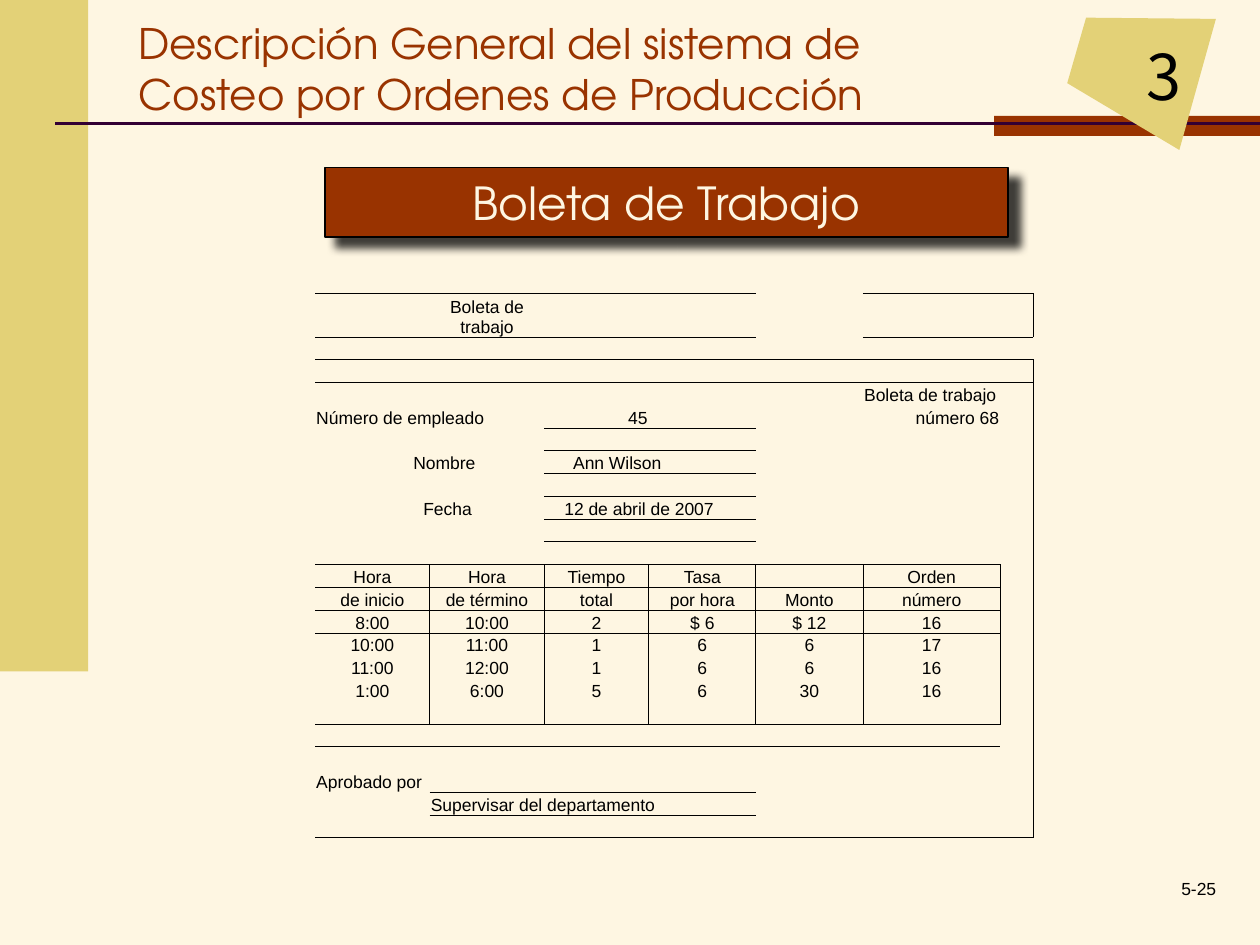
from lxml import etree
from pptx import Presentation
from pptx.dml.color import RGBColor
from pptx.enum.shapes import MSO_CONNECTOR, MSO_SHAPE
from pptx.enum.text import MSO_ANCHOR, PP_ALIGN
from pptx.oxml import parse_xml
from pptx.oxml.ns import nsdecls, qn
from pptx.util import Inches, Pt

RECTANGLE = MSO_SHAPE.RECTANGLE
STRAIGHT = MSO_CONNECTOR.STRAIGHT
TOP, MIDDLE, BOTTOM = MSO_ANCHOR.TOP, MSO_ANCHOR.MIDDLE, MSO_ANCHOR.BOTTOM
LEFT, CENTER, RIGHT = PP_ALIGN.LEFT, PP_ALIGN.CENTER, PP_ALIGN.RIGHT

CREAM = RGBColor(0xFE, 0xF6, 0xE2)
SAND = RGBColor(0xE3, 0xD1, 0x77)
RUST = RGBColor(0x99, 0x33, 0x00)
PLUM = RGBColor(0x33, 0x00, 0x33)
BLACK = RGBColor(0, 0, 0)

HEADING_FONT = "TeX Gyre Adventor"
CHAPTER_FONT = "Noto Sans CJK KR"
BODY_FONT = "Arial"
BODY_SIZE = 10

NO_GRID_STYLE = "{2D5ABB26-0587-4C30-8999-92F81FD0307C}"
COLUMN_WIDTHS = [0.91, 0.83, 0.83, 0.85, 0.85, 1.09, 0.26]
ROW_COUNT = 23
FIRST_ROW_HEIGHT = 0.34
TABLE_HEIGHT = 4.32

# row, column, text, alignment, left margin, columns spanned
LABELS = [
    (0, 1, "Boleta de trabajo", CENTER, 0.01, 1),
    (3, 5, "Boleta de trabajo", LEFT, 0.01, 2),
    (4, 0, "Número de empleado", LEFT, 0.01, 2),
    (4, 2, "45", RIGHT, 0.01, 1),
    (4, 5, "número 68", RIGHT, 0.01, 1),
    (6, 0, "Nombre", LEFT, 0.78, 2),
    (6, 2, "Ann Wilson", LEFT, 0.23, 2),
    (8, 0, "Fecha", LEFT, 0.86, 2),
    (8, 2, "12 de abril de 2007", LEFT, 0.16, 2),
    (20, 0, "Aprobado por", LEFT, 0.01, 1),
    (21, 1, "Supervisar del departamento", LEFT, 0.01, 3),
]
HOURS_TOP = 11
HOURS = [
    ["Hora", "Hora", "Tiempo", "Tasa", "", "Orden"],
    ["de inicio", "de término", "total", "por hora", "Monto", "número"],
    ["8:00", "10:00", "2", "$ 6", "$ 12", "16"],
    ["10:00", "11:00", "1", "6", "6", "17"],
    ["11:00", "12:00", "1", "6", "6", "16"],
    ["1:00", "6:00", "5", "6", "30", "16"],
]

# side, rows, columns
RULES = [
    ("T", [0], [0, 1, 2, 3, 5, 6]),
    ("B", [0], [0, 1, 2, 3, 5, 6]),
    ("B", [1, 22], range(7)),
    ("B", [4, 6, 8], [2, 3]),
    ("B", [10, 12, 17], range(6)),
    ("B", [20], [1, 2, 3]),
    ("R", [0, *range(2, ROW_COUNT)], [6]),
    ("R", range(HOURS_TOP, 18), range(5)),
    ("R", [3, 14], [5]),
]


def write(frame, text, font, size, color, align=LEFT, anchor=TOP):
    frame.word_wrap = True
    frame.vertical_anchor = anchor
    frame.text = text
    para = frame.paragraphs[0]
    para.alignment = align
    for span in para.runs:
        span.font.name = font
        span.font.size = Pt(size)
        span.font.color.rgb = color


def add_text(page, place, *style):
    box = page.shapes.add_textbox(*map(Inches, place))
    write(box.text_frame, *style)


def paint(shape, color):
    shape.shadow.inherit = False
    shape.fill.solid()
    shape.fill.fore_color.rgb = color
    shape.line.fill.background()


def add_block(page, place, color):
    block = page.shapes.add_shape(RECTANGLE, *map(Inches, place))
    paint(block, color)
    return block


def add_title_rule(page):
    rule = page.shapes.add_connector(
        STRAIGHT, Inches(0.44), Inches(0.98), Inches(10), Inches(0.98))
    rule.line.color.rgb = PLUM
    rule.line.width = Pt(1.5)
    etree.SubElement(rule._element.spPr, qn("a:effectLst"))


def add_chapter_badge(page):
    corners = [(8.62, 0.14), (8.47, 0.66), (9.36, 1.19), (9.65, 0.15)]
    start, *rest = [(Inches(x), Inches(y)) for x, y in corners]
    builder = page.shapes.build_freeform(*start)
    builder.add_line_segments(rest, close=True)
    paint(builder.convert_to_shape(), SAND)
    add_text(page, (9, 0.25, 0.58, 0.7), "3", CHAPTER_FONT, 36, BLACK, LEFT, MIDDLE)


def add_banner(page):
    banner = add_block(page, (2.58, 1.33, 5.42, 0.55), RUST)
    banner.line.color.rgb = BLACK
    banner.line.width = Pt(1)
    banner._element.spPr.find(qn("a:effectLst")).append(parse_xml(
        f'<a:outerShdw {nsdecls("a")} blurRad="{Pt(5)}" dist="{Pt(8.5)}" '
        'dir="2700000" algn="tl" rotWithShape="0"><a:srgbClr val="000000">'
        '<a:alpha val="75000"/></a:srgbClr></a:outerShdw>'))
    write(banner.text_frame, "Boleta de Trabajo", HEADING_FONT, 26, CREAM,
          CENTER, MIDDLE)


def border_sides():
    """Map each cell to its ruled sides; both cells at a shared edge carry it."""
    sides = {}
    for side, rows, columns in RULES:
        for row in rows:
            for column in columns:
                sides.setdefault((row, column), set()).add(side)
                if side == "B":
                    sides.setdefault((row + 1, column), set()).add("T")
                elif side == "R":
                    sides.setdefault((row, column + 1), set()).add("L")
    return sides


def style_cell(cell, sides):
    cell.margin_left = cell.margin_right = cell.margin_top = Inches(0.01)
    cell.margin_bottom = 0
    cell.vertical_anchor = BOTTOM
    end = etree.SubElement(cell.text_frame.paragraphs[0]._p, qn("a:endParaRPr"))
    end.set("sz", str(BODY_SIZE * 100))
    properties = cell._tc.get_or_add_tcPr()
    for side in "LRTB":
        if side in sides:
            properties.append(parse_xml(
                f'<a:ln{side} {nsdecls("a")} w="{Pt(0.5)}"><a:solidFill>'
                f'<a:srgbClr val="{BLACK}"/></a:solidFill></a:ln{side}>'))
    cell.fill.background()


def fill_cell(cell, text, align):
    write(cell.text_frame, text, BODY_FONT, BODY_SIZE, BLACK, align, BOTTOM)
    cell.vertical_anchor = BOTTOM


def add_job_ticket(page):
    frame = page.shapes.add_table(
        ROW_COUNT, len(COLUMN_WIDTHS), Inches(2.5), Inches(2.33),
        Inches(sum(COLUMN_WIDTHS)), Inches(TABLE_HEIGHT))
    table = frame.table
    table.first_row = table.horz_banding = False
    table._tbl.tblPr.find(qn("a:tableStyleId")).text = NO_GRID_STYLE
    for column, width in zip(table.columns, COLUMN_WIDTHS):
        column.width = Inches(width)
    for row in table.rows:
        row.height = Inches((TABLE_HEIGHT - FIRST_ROW_HEIGHT) / (ROW_COUNT - 1))
    table.rows[0].height = Inches(FIRST_ROW_HEIGHT)

    sides = border_sides()
    for row in range(ROW_COUNT):
        for column in range(len(COLUMN_WIDTHS)):
            style_cell(table.cell(row, column), sides.get((row, column), ()))
    for row, column, text, align, margin, width in LABELS:
        cell = table.cell(row, column)
        if width > 1:
            cell.merge(table.cell(row, column + width - 1))
        fill_cell(cell, text, align)
        cell.margin_left = Inches(margin)
    for row, values in enumerate(HOURS, HOURS_TOP):
        for column, value in enumerate(values):
            if value:
                fill_cell(table.cell(row, column), value, CENTER)


def main():
    deck = Presentation()
    deck.slide_width, deck.slide_height = Inches(10), Inches(7.5)
    page = deck.slides.add_slide(deck.slide_layouts[6])
    page.background.fill.solid()
    page.background.fill.fore_color.rgb = CREAM

    add_block(page, (0, 0, 0.7, 5.33), SAND)
    add_block(page, (7.89, 0.92, 2.11, 0.16), RUST)
    add_title_rule(page)
    add_text(page, (9, 6.92, 0.75, 0.17), "5-25", BODY_FONT, 10, BLACK, RIGHT)
    add_text(page, (1, 0.25, 7.08, 0.58),
             "Descripción General del sistema de Costeo por Ordenes de Producción",
             HEADING_FONT, 24, RUST, LEFT, MIDDLE)
    add_chapter_badge(page)
    add_banner(page)
    add_job_ticket(page)
    deck.save("out.pptx")


if __name__ == "__main__":
    main()
